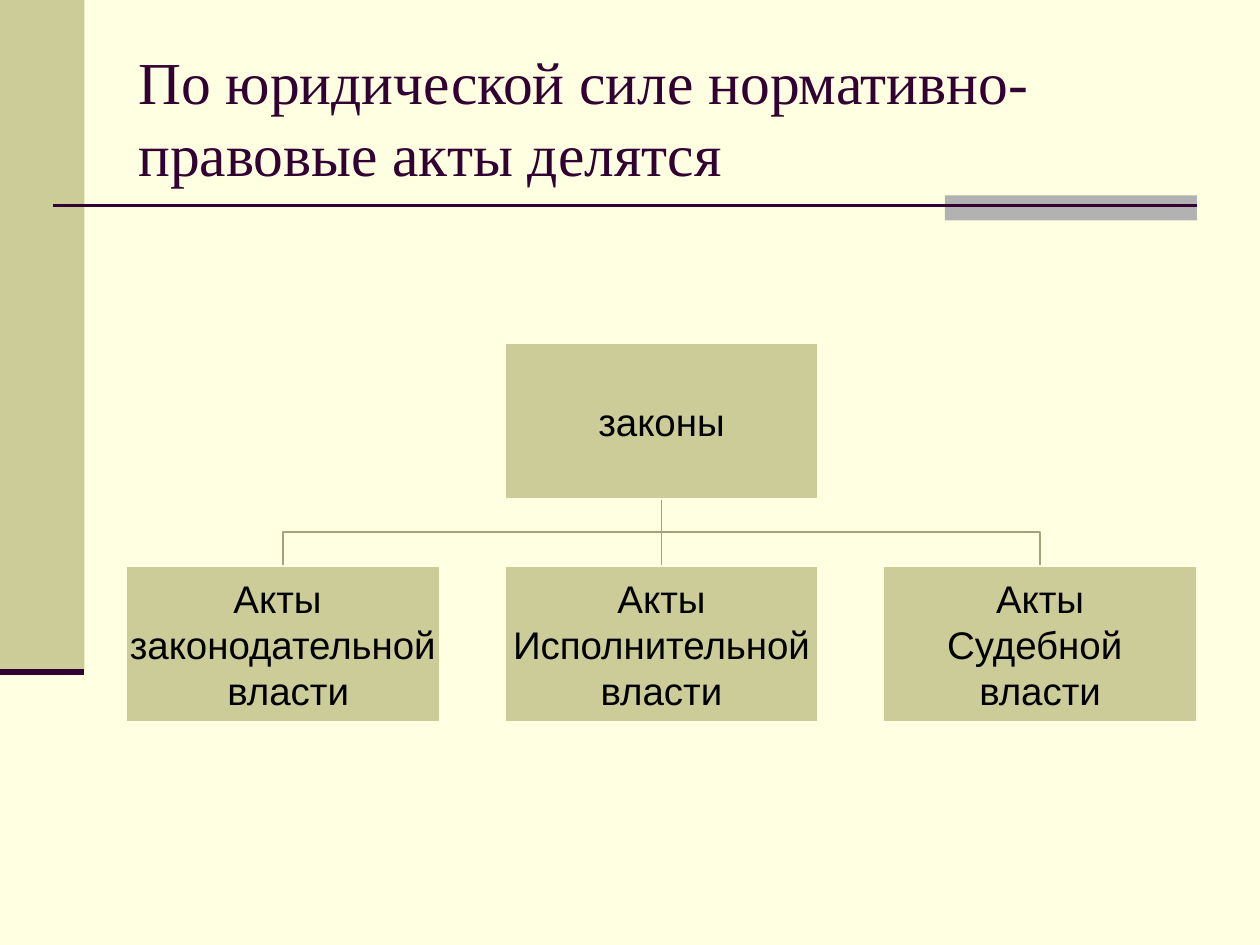
from dataclasses import dataclass

from pptx import Presentation
from pptx.dml.color import RGBColor
from pptx.enum.shapes import MSO_CONNECTOR, MSO_SHAPE
from pptx.enum.text import MSO_ANCHOR, PP_ALIGN
from pptx.oxml.ns import qn
from pptx.util import Inches, Pt

RECT = MSO_SHAPE.RECTANGLE
STRAIGHT = MSO_CONNECTOR.STRAIGHT
MIDDLE = MSO_ANCHOR.MIDDLE
LEFT, CENTER = PP_ALIGN.LEFT, PP_ALIGN.CENTER

TITLE = ["По юридической силе нормативно-правовые акты делятся"]
ROOT = ["законы"]
LEAVES = [
    ["Акты ", "законодательной", " власти"],
    ["Акты", "Исполнительной", "власти"],
    ["Акты", "Судебной ", "власти"],
]
BARS = [
    ((0, 0, 0.67, 5.33), "CCCC99"),
    ((7.5, 1.55, 2, 0.2), "B2B2B2"),
]
RULES = [
    ((0.42, 1.63, 9.5, 1.63), 1.5),
    ((0, 5.33, 0.67, 5.33), 3.5),
]
BOX_W, BOX_H = 2.49, 1.24
START, END = 1, 9.5
ROOT_Y, LEAF_Y = 2.72, 4.49


@dataclass(frozen=True)
class Theme:
    back: str = "FFFFE1"
    box: str = "CCCC99"
    dark: str = "330033"
    link: str = "A3A37B"
    ink: str = "000000"
    head: str = "Times New Roman"
    body: str = "Arial"
    head_size: int = 34
    body_size: int = 22


THEME = Theme()


def color(code):
    return RGBColor.from_string(code)


def add_rect(slide, at, fill, edge=None):
    rect = slide.shapes.add_shape(RECT, *map(Inches, at))
    rect.shadow.inherit = False
    rect.fill.solid()
    rect.fill.fore_color.rgb = color(fill)
    if edge:
        rect.line.color.rgb = color(edge)
        rect.line.width = Pt(1)
    else:
        rect.line.fill.background()
    return rect


def add_rule(slide, ends, width):
    rule = slide.shapes.add_connector(STRAIGHT, *map(Inches, ends))
    rule.line.color.rgb = color(THEME.dark)
    rule.line.width = Pt(width)
    props = rule._element.spPr
    props.append(props.makeelement(qn("a:effectLst"), {}))


def add_link(slide, points):
    first, *rest = [tuple(map(Inches, point)) for point in points]
    maker = slide.shapes.build_freeform(*first)
    maker.add_line_segments(rest, close=False)
    link = maker.convert_to_shape()
    link.shadow.inherit = False
    link.fill.background()
    link.line.color.rgb = color(THEME.link)
    link.line.width = Pt(1)


def set_text(shape, lines, font, size, ink, align, inset):
    frame = shape.text_frame
    frame.word_wrap = True
    frame.vertical_anchor = MIDDLE
    frame.margin_left = frame.margin_right = Inches(inset)
    frame.margin_top = frame.margin_bottom = Inches(min(inset, 0.05))
    for i, line in enumerate(lines):
        para = frame.add_paragraph() if i else frame.paragraphs[0]
        para.alignment = align
        run = para.add_run()
        run.text = line
        run.font.name = font
        run.font.size = Pt(size)
        run.font.color.rgb = color(ink)


def add_box(slide, x, y, lines):
    box = add_rect(slide, (x, y, BOX_W, BOX_H), THEME.box, THEME.back)
    set_text(box, lines, THEME.body, THEME.body_size, THEME.ink, CENTER, 0.02)


def add_tree(slide):
    step = (END - START - BOX_W) / (len(LEAVES) - 1)
    lefts = [START + i * step for i in range(len(LEAVES))]
    root_x = (START + END - BOX_W) / 2
    mid_x = root_x + BOX_W / 2
    top = ROOT_Y + BOX_H
    mid_y = (top + LEAF_Y) / 2
    for x in lefts:
        leaf_x = x + BOX_W / 2
        add_link(slide, [(mid_x, top), (mid_x, mid_y),
                         (leaf_x, mid_y), (leaf_x, LEAF_Y)])
    add_box(slide, root_x, ROOT_Y, ROOT)
    for x, lines in zip(lefts, LEAVES):
        add_box(slide, x, LEAF_Y, lines)


def main():
    """Build a slide that ranks legal acts in a tree."""
    deck = Presentation()
    deck.slide_width, deck.slide_height = Inches(10), Inches(7.5)
    slide = deck.slides.add_slide(deck.slide_layouts[6])
    back = slide.background.fill
    back.solid()
    back.fore_color.rgb = color(THEME.back)
    for at, fill in BARS:
        add_rect(slide, at, fill)
    for ends, width in RULES:
        add_rule(slide, ends, width)
    title = slide.shapes.add_textbox(*map(Inches, (1, 0.3, 8.5, 1.25)))
    set_text(title, TITLE, THEME.head, THEME.head_size, THEME.dark, LEFT, 0.1)
    add_tree(slide)
    deck.save("out.pptx")


if __name__ == "__main__":
    main()
